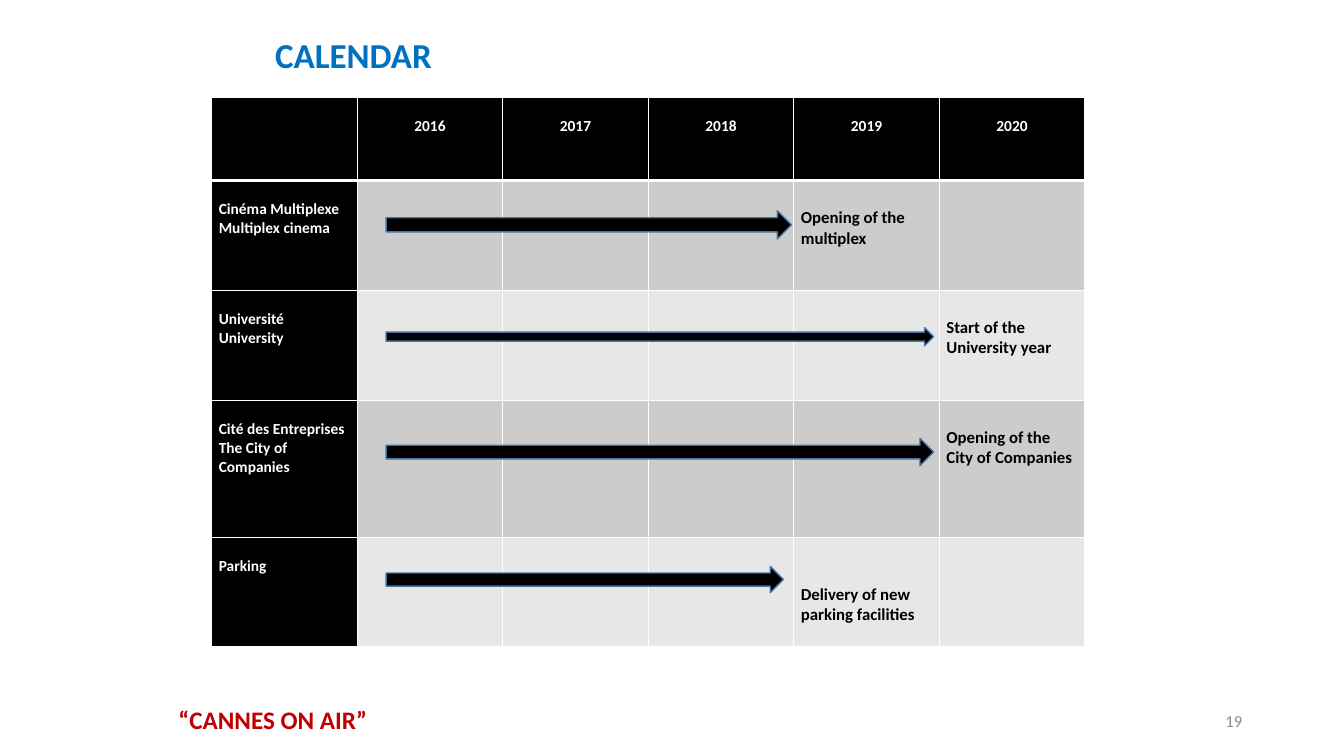
from dataclasses import dataclass

from lxml.etree import SubElement
from pptx import Presentation
from pptx.dml.color import RGBColor as Rgb
from pptx.enum.shapes import MSO_SHAPE as Shape
from pptx.enum.text import MSO_ANCHOR as Anchor, PP_ALIGN as Align
from pptx.oxml.ns import qn
from pptx.util import Inches, Pt


@dataclass(frozen=True)
class Theme:
    font: str = "Calibri"
    black: str = "000000"
    white: str = "FFFFFF"
    blue: str = "0070C0"
    red: str = "C00000"
    grey: str = "8C8C8C"
    edge: str = "43739E"
    bands: tuple = ("CCCCCC", "E7E7E7")
    title: float = 25
    foot: float = 18
    body: float = 12
    label: float = 11


YEARS = ["2016", "2017", "2018", "2019", "2020"]
HEAD = 0.82
# labels, row height, event, event column, event top inset, arrow (top, width, height)
ROWS = [
    (["Cinéma Multiplexe", "Multiplex cinema"], 1.09,
     "Opening of the multiplex", 4, 0.27, (2.09, 4.02, 0.28)),
    (["Université", "University"], 1.09,
     "Start of the University year", 5, 0.27, (3.25, 5.43, 0.18)),
    (["Cité des Entreprises", "The City of Companies"], 1.36,
     "Opening of the City of Companies", 5, 0.27, (4.35, 5.43, 0.27)),
    (["Parking"], 1.09,
     "Delivery of new parking facilities", 4, 0.47, (5.62, 3.94, 0.26)),
]


class Page:
    def __init__(self, slide, theme):
        self.slide, self.theme = slide, theme

    def lines(self, frame, lines, size, color, bold=True, align=Align.LEFT):
        """Fill a text frame with one paragraph per line."""
        look = {"name": self.theme.font, "size": Pt(size), "bold": bold}
        for n, line in enumerate(lines):
            para = frame.add_paragraph() if n else frame.paragraphs[0]
            para.alignment = align
            run = para.add_run()
            run.text = line
            for key, value in look.items():
                setattr(run.font, key, value)
            run.font.color.rgb = Rgb.from_string(color)

    def title(self, text, box):
        shape = self.slide.shapes.title
        for key, value in zip(("left", "top", "width", "height"), box):
            setattr(shape, key, Inches(value))
        shape.text_frame.vertical_anchor = Anchor.MIDDLE
        self.lines(shape.text_frame, [text], self.theme.title, self.theme.blue)

    def text(self, text, box, size, color, wrap=True, anchor=Anchor.TOP, **look):
        frame = self.slide.shapes.add_textbox(*map(Inches, box)).text_frame
        frame.word_wrap, frame.vertical_anchor = wrap, anchor
        self.lines(frame, [text], size, color, **look)

    def table(self, box, heights, cols):
        shape = self.slide.shapes.add_table(len(heights), cols, *map(Inches, box))
        grid = shape.table
        for col in grid.columns:
            col.width = Inches(box[2] / cols)
        for row, height in zip(grid.rows, heights):
            row.height = Inches(height)
        return grid

    def cell(self, cell, fill, rules):
        """Paint a cell; rules maps border tags to widths in points."""
        props = cell._tc.get_or_add_tcPr()
        for tag, width in rules.items():
            line = SubElement(props, qn(f"a:{tag}"), w=str(Pt(width)))
            paint = SubElement(line, qn("a:solidFill"))
            SubElement(paint, qn("a:srgbClr"), val=self.theme.white)
        cell.fill.solid()
        cell.fill.fore_color.rgb = Rgb.from_string(fill)

    def entry(self, cell, lines, inset, size, color, align=Align.LEFT):
        margins = {"left": 0.07, "right": 0.07, "top": inset, "bottom": 0}
        for side, value in margins.items():
            setattr(cell, f"margin_{side}", Inches(value))
        self.lines(cell.text_frame, lines, size, color, align=align)

    def arrow(self, box):
        shape = self.slide.shapes.add_shape(Shape.RIGHT_ARROW, *map(Inches, box))
        shape.shadow.inherit = False
        shape.fill.solid()
        shape.fill.fore_color.rgb = Rgb.from_string(self.theme.black)
        shape.line.color.rgb = Rgb.from_string(self.theme.edge)
        shape.line.width = Pt(1)


def calendar(page):
    theme = page.theme
    heights = [HEAD] + [row[1] for row in ROWS]
    grid = page.table((2.1, 0.97, 8.66, sum(heights)), heights, len(YEARS) + 1)
    for r in range(len(heights)):
        rules = {"lnL": 1, "lnR": 1, "lnT": 3 if r == 1 else 1, "lnB": 1 if r else 3}
        for c in range(len(YEARS) + 1):
            fill = theme.bands[(r - 1) % 2] if r and c else theme.black
            page.cell(grid.cell(r, c), fill, rules)
    for c, year in enumerate(YEARS, 1):
        page.entry(grid.cell(0, c), [year], 0.19, theme.label, theme.white, Align.CENTER)
    for r, (names, _, event, col, inset, (top, width, height)) in enumerate(ROWS, 1):
        page.entry(grid.cell(r, 0), names, 0.19, theme.label, theme.white)
        page.entry(grid.cell(r, col), [event], inset, theme.body, theme.black)
        page.arrow((3.83, top, width, height))


def main():
    deck = Presentation()
    deck.slide_width, deck.slide_height = Inches(13.33), Inches(7.5)
    theme = Theme()
    page = Page(deck.slides.add_slide(deck.slide_layouts[5]), theme)
    page.title("CALENDAR", (2.63, -0.08, 9, 1.25))
    page.text("19", (9.42, 6.95, 3, 0.4), theme.body, theme.grey,
              anchor=Anchor.MIDDLE, bold=False, align=Align.RIGHT)
    calendar(page)
    page.text("“CANNES ON AIR”", (1.67, 6.94, 2.09, 0.4), theme.foot, theme.red, wrap=False)
    deck.save("out.pptx")


if __name__ == "__main__":
    main()
